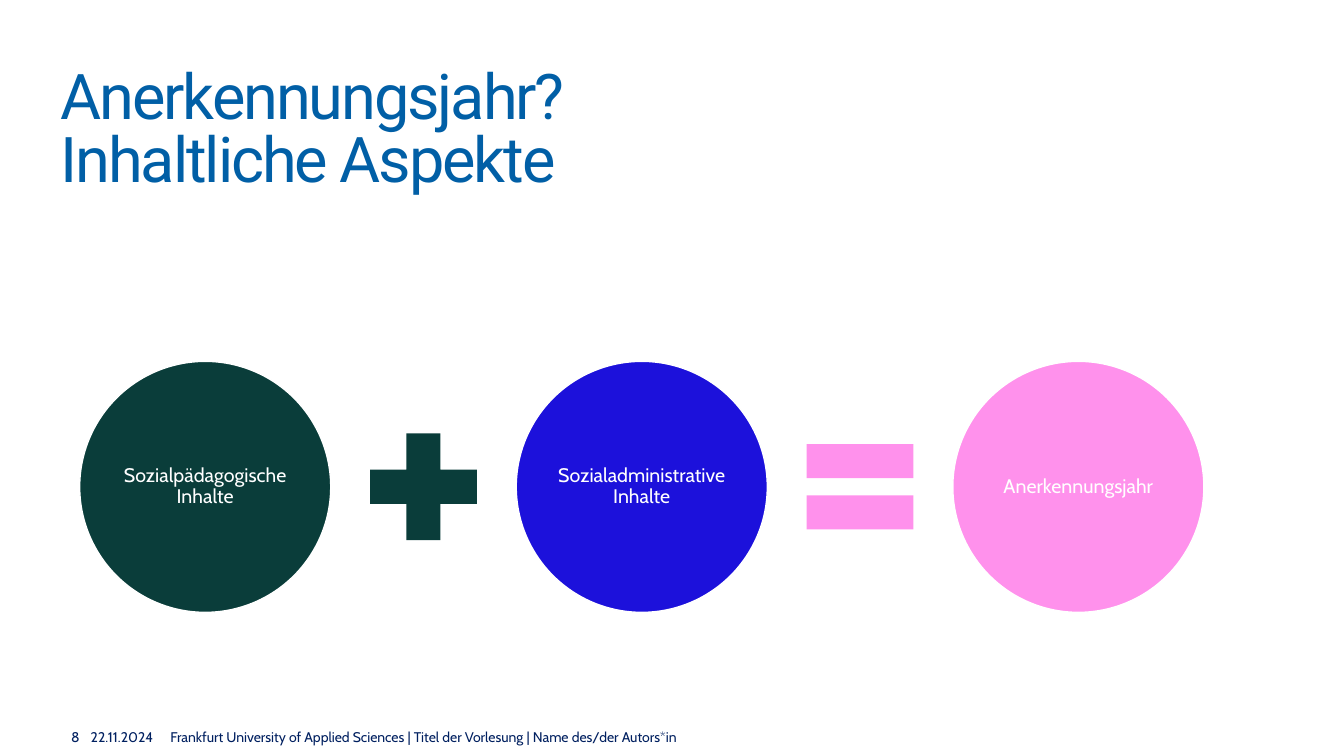
from pptx import Presentation
from pptx.dml.color import RGBColor
from pptx.enum.shapes import MSO_SHAPE as Shape
from pptx.enum.text import MSO_ANCHOR as Anchor, MSO_AUTO_SIZE as Fit, PP_ALIGN as Align
from pptx.util import Inches, Pt

GREEN, BLUE, PINK = "0A3D3A", "1C11DB", "FF91EC"
WHITE, NAVY, AZURE = "FFFFFF", "002060", "015FA6"
DISC, SIGN, GAP = 2.49, 1.44, 0.2
LEFT, MIDDLE = 0.79, 4.83


def color(code):
    return RGBColor.from_string(code)


def write(shape, text, size=10, font="Cabin", ink=NAVY, align=Align.LEFT,
          anchor=Anchor.MIDDLE, inset=0, leading=None, track=None):
    frame = shape.text_frame
    frame.word_wrap = True
    frame.auto_size = Fit.NONE
    frame.vertical_anchor = anchor
    frame.margin_left = frame.margin_right = Inches(inset)
    frame.margin_top = frame.margin_bottom = Inches(inset)
    para = frame.paragraphs[0]
    para.text = text
    para.alignment = align
    para.space_before = Pt(0)
    para.line_spacing = leading
    for run in para.runs:
        run.font.size = Pt(size)
        run.font.name = font
        run.font.color.rgb = color(ink)
        if track is not None:
            run.font._element.set("spc", str(round(track * 100)))


def add_title(slide, text):
    title = slide.shapes.title
    title.left, title.top = Inches(0.6), Inches(0.69)
    title.width, title.height = Inches(10.19), Inches(0.53)
    write(title, text, size=45, font="Roboto", ink=AZURE, anchor=Anchor.TOP,
          leading=Pt(45), track=-1.5)


def add_note(slide, text, left, width, align=Align.LEFT):
    box = slide.shapes.add_textbox(Inches(left), Inches(7.23), Inches(width), Inches(0.16))
    write(box, text, align=align)


def add_part(slide, kind, left, size, fill):
    """Add a square shape centred on the row of the equation."""
    part = slide.shapes.add_shape(kind, Inches(left), Inches(MIDDLE - size / 2),
                                  Inches(size), Inches(size))
    part.shadow.inherit = False
    part.fill.solid()
    part.fill.fore_color.rgb = color(fill)
    part.line.fill.background()
    return part


def add_disc(slide, left, fill, text):
    disc = add_part(slide, Shape.OVAL, left, DISC, fill)
    disc.line.color.rgb = color(WHITE)
    disc.line.width = Pt(1)
    write(disc, text, size=14, ink=WHITE, align=Align.CENTER, inset=0.02, leading=0.9)


def main():
    deck = Presentation()
    deck.slide_width, deck.slide_height = Inches(13.33), Inches(7.5)
    slide = deck.slides.add_slide(deck.slide_layouts[5])

    add_title(slide, "Anerkennungsjahr?\vInhaltliche Aspekte")

    terms = [
        ("Sozialpädagogische Inhalte", GREEN, None, None),
        ("Sozialadministrative Inhalte", BLUE, Shape.MATH_PLUS, GREEN),
        ("Anerkennungsjahr", PINK, Shape.MATH_EQUAL, PINK),
    ]
    pitch = DISC + SIGN + 2 * GAP
    for i, (text, fill, sign, tint) in enumerate(terms):
        left = LEFT + i * pitch
        if sign is not None:
            add_part(slide, sign, left - GAP - SIGN, SIGN, tint)
        add_disc(slide, left, fill, text)

    add_note(slide, "8", 0.11, 0.68, Align.RIGHT)
    add_note(slide, "22.11.2024", 0.9, 0.68)
    add_note(slide, "Frankfurt University of Applied Sciences | Titel der Vorlesung"
                    " | Name des/der Autors*in", 1.69, 10.18)
    deck.save("out.pptx")


if __name__ == "__main__":
    main()
